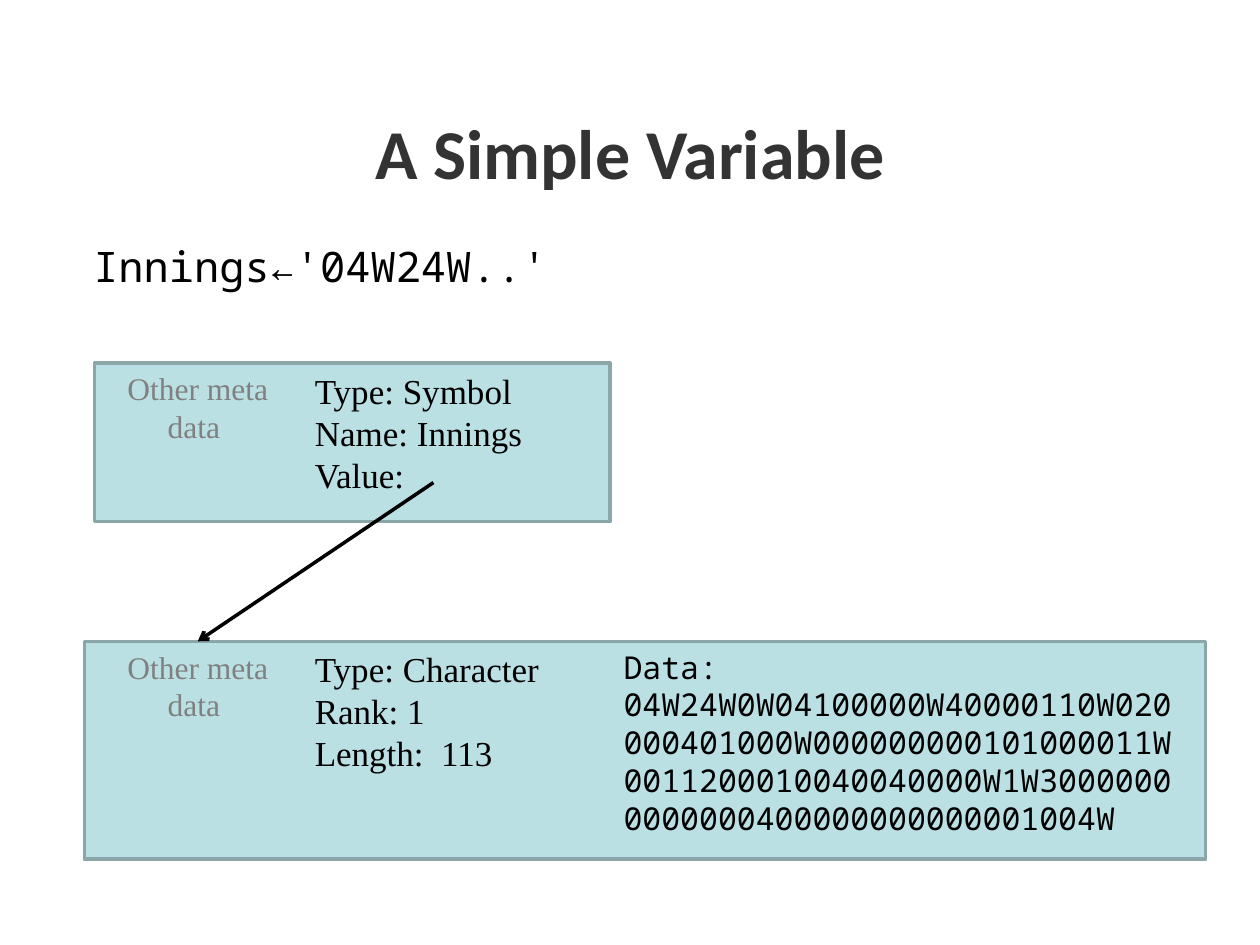
from lxml.etree import SubElement
from pptx import Presentation
from pptx.dml.color import RGBColor
from pptx.enum.shapes import MSO_CONNECTOR, MSO_SHAPE
from pptx.enum.text import MSO_ANCHOR, PP_ALIGN
from pptx.oxml.ns import qn
from pptx.util import Inches, Pt

BLACK = RGBColor(0x00, 0x00, 0x00)
DARK = RGBColor(0x33, 0x33, 0x33)
GREY = RGBColor(0x80, 0x80, 0x80)
TEAL = RGBColor(0xBB, 0xE0, 0xE3)
EDGE = RGBColor(0x8A, 0xA6, 0xA8)
MONO = "Noto Sans Mono"
SERIF = "Times New Roman"
DATA = (
    "04W24W0W04100000W40000110W020000401000W000000000101000011W"
    "0011200010040040000W1W30000000000000400000000000001004W"
)


def add_text(shapes, lines, left, top, width, height, font=SERIF, size=20,
             color=BLACK, bold=False, align=PP_ALIGN.LEFT, anchor=MSO_ANCHOR.TOP):
    box = shapes.add_textbox(Inches(left), Inches(top), Inches(width), Inches(height))
    frame = box.text_frame
    frame.word_wrap = True
    frame.vertical_anchor = anchor
    frame.text = "\n".join(lines)
    for para in frame.paragraphs:
        para.alignment = align
        para.font.name = font
        para.font.size = Pt(size)
        para.font.color.rgb = color
        para.font.bold = bold
    return box


def add_panel(shapes, left, top, width, height):
    panel = shapes.add_shape(MSO_SHAPE.RECTANGLE, Inches(left), Inches(top),
                             Inches(width), Inches(height))
    panel.shadow.inherit = False
    panel.fill.solid()
    panel.fill.fore_color.rgb = TEAL
    panel.line.color.rgb = EDGE
    panel.line.width = Pt(2)


def add_record(slide, facts, left, top, width, height, data=None):
    shapes = slide.shapes.add_group_shape().shapes
    add_panel(shapes, left, top, width, height)
    if data:
        add_text(shapes, ["Data:", data], 4.85, top, 4.65, 1.62, font=MONO, size=18)
    meta = add_text(shapes, ["Other meta data "], 0.91, top, 1.32, 0.71,
                    size=18, color=GREY, align=PP_ALIGN.CENTER)
    add_text(shapes, facts, 2.4, top, 2.36, 1.11)
    return meta


def add_arrow(slide, left, top, target):
    arrow = slide.shapes.add_connector(MSO_CONNECTOR.STRAIGHT, Inches(left), Inches(top),
                                       target.left, target.top)
    arrow.end_connect(target, 0)
    arrow.line.color.rgb = BLACK
    arrow.line.width = Pt(2)
    SubElement(arrow.line._get_or_add_ln(), qn("a:tailEnd"), type="arrow")
    SubElement(arrow._element.spPr, qn("a:effectLst"))


def main():
    deck = Presentation()
    deck.slide_width = Inches(10)
    deck.slide_height = Inches(7.5)
    slide = deck.slides.add_slide(deck.slide_layouts[6])
    add_text(slide.shapes, ["A Simple Variable"], 0.5, 0.77, 9, 0.86, font="Calibri",
             size=40, color=DARK, bold=True, align=PP_ALIGN.CENTER,
             anchor=MSO_ANCHOR.MIDDLE)
    add_text(slide.shapes, ["Innings←'04W24W..'"], 0.55, 1.86, 3.98, 0.5,
             font=MONO, size=24, align=PP_ALIGN.CENTER)
    add_record(slide, ["Type: Symbol", "Name: Innings", "Value:"], 0.75, 2.88, 4.09, 1.26)
    meta = add_record(slide, ["Type: Character", "Rank: 1", "Length:  113"],
                      0.67, 5.09, 8.9, 1.73, data=DATA)
    add_arrow(slide, 3.44, 3.83, meta)
    deck.save("out.pptx")


if __name__ == "__main__":
    main()
